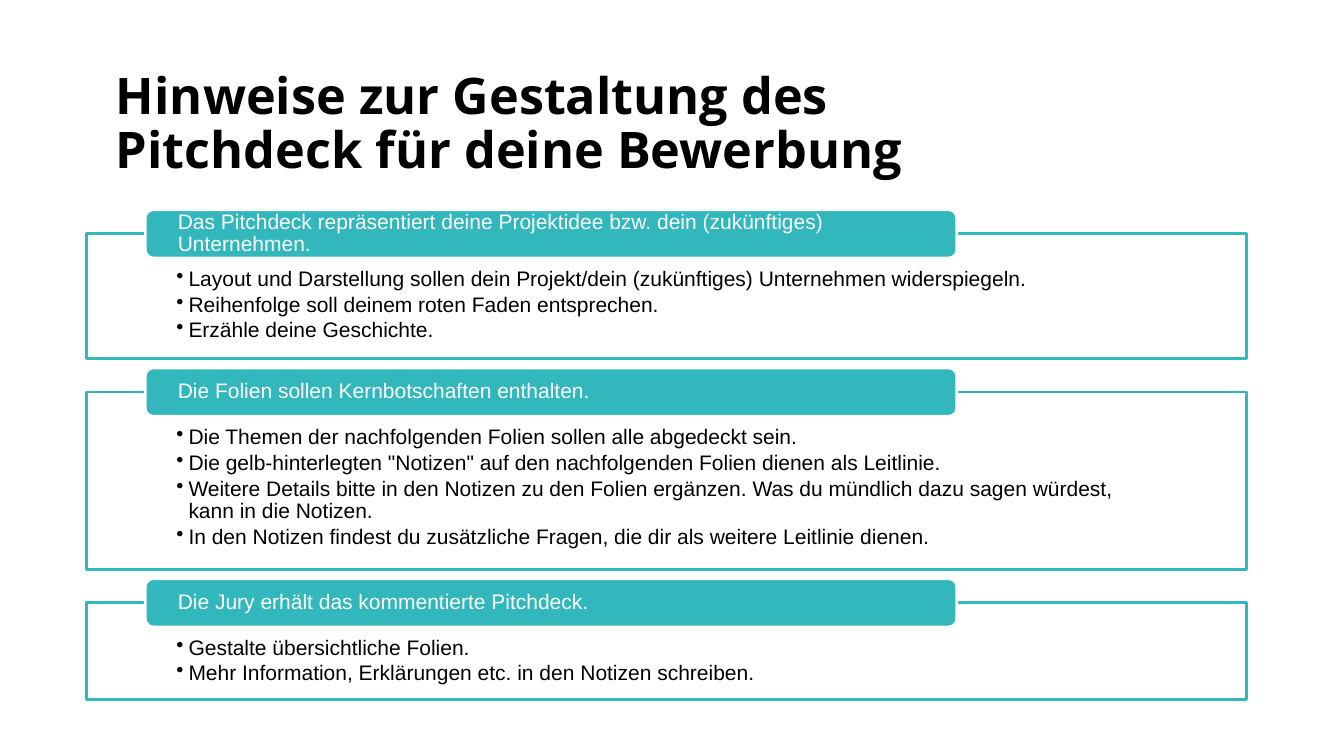
import pptx
import pptx.util
import pptx.dml.color
import pptx.enum.shapes
import pptx.enum.text
import pptx.oxml.ns
import lxml.etree

Inches, Pt = pptx.util.Inches, pptx.util.Pt
SHAPE = pptx.enum.shapes.MSO_SHAPE
ANCHOR = pptx.enum.text.MSO_ANCHOR
ALIGN = pptx.enum.text.PP_ALIGN

HEADLINE = "Hinweise zur Gestaltung des Pitchdeck für deine Bewerbung"
SECTIONS = [
    ("Das Pitchdeck repräsentiert deine Projektidee bzw. dein (zukünftiges) Unternehmen.", 1.24, [
        "Layout und Darstellung sollen dein Projekt/dein (zukünftiges) Unternehmen widerspiegeln.",
        "Reihenfolge soll deinem roten Faden entsprechen.",
        "Erzähle deine Geschichte.",
    ]),
    ("Die Folien sollen Kernbotschaften enthalten.", 1.76, [
        "Die Themen der nachfolgenden Folien sollen alle abgedeckt sein.",
        'Die gelb-hinterlegten "Notizen" auf den nachfolgenden Folien dienen als Leitlinie.',
        "Weitere Details bitte in den Notizen zu den Folien ergänzen. "
        "Was du mündlich dazu sagen würdest, kann in die Notizen.",
        "In den Notizen findest du zusätzliche Fragen, die dir als weitere Leitlinie dienen.",
    ]),
    ("Die Jury erhält das kommentierte Pitchdeck.", 0.96, [
        "Gestalte übersichtliche Folien.",
        "Mehr Information, Erklärungen etc. in den Notizen schreiben.",
    ]),
]
COLORS = {"teal": "31B7BC", "white": "FFFFFF", "black": "000000"}
FIRST_TOP, GAP, TAB_RISE = 2.32, 0.33, 0.24


def rgb(name):
    return pptx.dml.color.RGBColor.from_string(COLORS[name])


def add_box(slide, kind, place, fill, line, insets, anchor):
    box = slide.shapes.add_shape(kind, *[Inches(v) for v in place])
    box.shadow.inherit = False
    box.fill.solid()
    box.fill.fore_color.rgb = rgb(fill)
    box.line.color.rgb = rgb(line)
    box.line.width = Pt(2)
    frame = box.text_frame
    frame.word_wrap = True
    frame.vertical_anchor = anchor
    frame.margin_left, frame.margin_top, frame.margin_right, frame.margin_bottom = [
        Inches(v) for v in insets]
    return frame


def write(frame, lines, color, bulleted=False):
    for number, line in enumerate(lines):
        paragraph = frame.add_paragraph() if number else frame.paragraphs[0]
        paragraph.text = line
        paragraph.alignment = ALIGN.LEFT
        paragraph.line_spacing = 0.9
        if bulleted:
            paragraph.level = 1
            paragraph.space_after = Pt(2.25)
            properties = paragraph._p.get_or_add_pPr()
            properties.set("marL", str(Inches(0.12)))
            properties.set("indent", str(-Inches(0.12)))
            bullet = lxml.etree.SubElement(properties, pptx.oxml.ns.qn("a:buChar"))
            bullet.set("char", "•")
        paragraph.font.name = "Arial"
        paragraph.font.size = Pt(15)
        paragraph.font.color.rgb = rgb(color)


def add_headline(slide):
    title = slide.shapes.title
    title.left, title.top, title.width, title.height = [
        Inches(v) for v in (1.05, 0.65, 9.75, 0.81)]
    frame = title.text_frame
    frame.text = HEADLINE
    frame.word_wrap = True
    frame.auto_size = pptx.enum.text.MSO_AUTO_SIZE.NONE
    frame.vertical_anchor = ANCHOR.TOP
    paragraph = frame.paragraphs[0]
    paragraph.alignment = ALIGN.LEFT
    paragraph.line_spacing = 0.9
    paragraph.font.name = "Open Sans"
    paragraph.font.size = Pt(36)
    paragraph.font.bold = True
    paragraph.font.color.rgb = rgb("black")


def main():
    deck = pptx.Presentation()
    deck.slide_width, deck.slide_height = Inches(13.33), Inches(7.5)
    slide = deck.slides.add_slide(deck.slide_layouts[5])
    add_headline(slide)
    top = FIRST_TOP
    for heading, height, points in SECTIONS:
        panel = add_box(slide, SHAPE.RECTANGLE, (0.86, top, 11.5, height),
                        "white", "teal", (0.89, 0.34, 0.89, 0.12), ANCHOR.TOP)
        write(panel, points, "black", bulleted=True)
        tab = add_box(slide, SHAPE.ROUNDED_RECTANGLE, (1.44, top - TAB_RISE, 8.05, 0.48),
                      "teal", "white", (0.3, 0, 0.3, 0), ANCHOR.MIDDLE)
        write(tab, [heading], "white")
        top += height + GAP
    deck.save("out.pptx")


if __name__ == "__main__":
    main()
